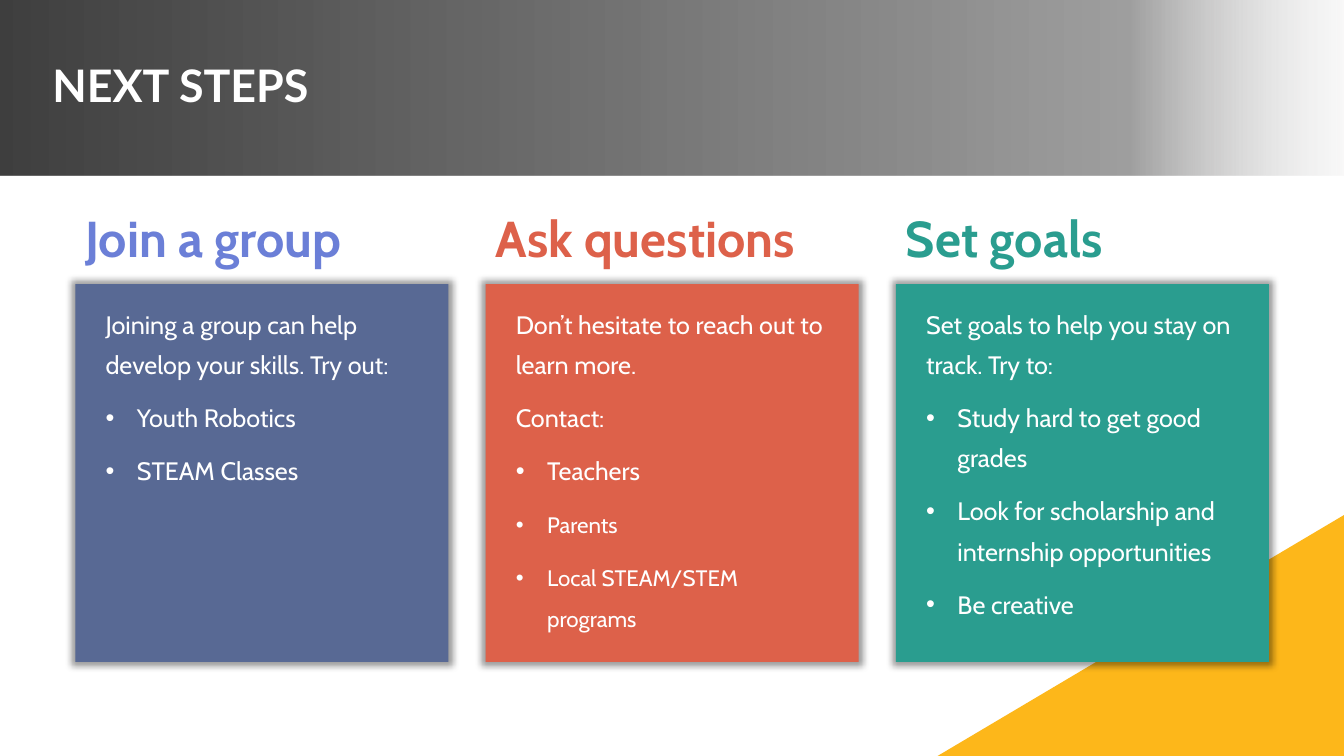
from dataclasses import dataclass

from lxml import etree
from pptx import Presentation
from pptx import util as u
from pptx.dml.color import RGBColor
from pptx.enum import shapes, text
from pptx.oxml import ns, parse_xml


@dataclass(frozen=True)
class Theme:
    white: str = "FFFFFF"
    gold: str = "FDB71A"
    blue: str = "586994"
    sky: str = "6B7FD7"
    red: str = "DD614A"
    green: str = "2A9D8F"
    title: int = 32
    head: int = 36
    body: int = 18
    small: int = 16
    head_font: str = "Lato"
    body_font: str = "Cabin"


@dataclass(frozen=True)
class Item:
    words: str
    dot: bool = True
    size: int = Theme.body


@dataclass(frozen=True)
class Card:
    head: str
    ink: str
    fill: str
    head_w: float
    body_h: float
    items: list[Item]


T = Theme()
WIDE, HIGH = 33.87, 19.05
LEFT, STEP = 1.9, 10.34
CARD_W, CARD_H, CARD_Y, HEAD_Y = 9.4, 9.52, 7.16, 5.61
PAD_X, PAD_Y = 0.51, 0.25
FADE = [(0, "000000", 75), (84, "808080", 75), (100, "E7E6E6", 25)]

CARDS = [
    Card("Join a group", T.sky, T.blue, 8.38, 4.95, [
        Item("Joining a group can help develop your skills. Try out:", dot=False),
        Item("Youth Robotics"),
        Item("STEAM Classes"),
    ]),
    Card("Ask questions", T.red, T.red, 8.89, 7.62, [
        Item("Don’t hesitate to reach out to learn more.", dot=False),
        Item("Contact:", dot=False),
        Item("Teachers"),
        Item("Parents", size=T.small),
        Item("Local STEAM/STEM programs", size=T.small),
    ]),
    Card("Set goals", T.green, T.green, 8.89, 8.36, [
        Item("Set goals to help you stay on track. Try to:", dot=False),
        Item("Study hard to get good grades"),
        Item("Look for scholarship and internship opportunities"),
        Item("Be creative"),
    ]),
]


def add_block(slide, kind, x: float, y: float, w: float, h: float, fill: str):
    block = slide.shapes.add_shape(kind, u.Cm(x), u.Cm(y), u.Cm(w), u.Cm(h))
    block.shadow.inherit = False
    block.fill.solid()
    block.fill.fore_color.rgb = RGBColor.from_string(fill)
    block.line.fill.background()
    return block


def add_glow(block) -> None:
    """Soft dark shadow, slightly larger than the block."""
    effect = block._element.spPr.find(ns.qn("a:effectLst"))
    glow = etree.SubElement(effect, ns.qn("a:outerShdw"), blurRad=str(u.Pt(5)),
                            dist="0", sx="102000", sy="102000", algn="ctr")
    tint = etree.SubElement(glow, ns.qn("a:srgbClr"), val="000000")
    etree.SubElement(tint, ns.qn("a:alpha"), val="40000")


def add_fade(block) -> None:
    """Swap the solid fill for a left-to-right fade."""
    stops = "".join(
        f'<a:gs pos="{pos * 1000}"><a:srgbClr val="{hue}">'
        f'<a:alpha val="{alpha * 1000}"/></a:srgbClr></a:gs>'
        for pos, hue, alpha in FADE)
    fade = parse_xml(f'<a:gradFill {ns.nsdecls("a")}><a:gsLst>{stops}</a:gsLst>'
                     '<a:lin ang="0" scaled="0"/></a:gradFill>')
    props = block._element.spPr
    props.replace(props.find(ns.qn("a:solidFill")), fade)


def add_box(slide, x: float, y: float, w: float, h: float):
    frame = slide.shapes.add_textbox(u.Cm(x), u.Cm(y), u.Cm(w), u.Cm(h)).text_frame
    frame.word_wrap = True
    return frame


def style(para, size: int, font: str, ink: str, bold: bool = False) -> None:
    for run in para.runs:
        run.font.size = u.Pt(size)
        run.font.name = font
        run.font.bold = bold
        run.font.color.rgb = RGBColor.from_string(ink)


def add_dot(para) -> None:
    props = para._p.get_or_add_pPr()
    props.set("marL", str(u.Cm(0.79)))
    props.set("indent", str(-u.Cm(0.79)))
    etree.SubElement(props, ns.qn("a:buFont"), typeface="Arial")
    etree.SubElement(props, ns.qn("a:buChar"), char="•")


def add_items(frame, items: list[Item], ink: str, bold: bool = False) -> None:
    frame.auto_size = text.MSO_AUTO_SIZE.SHAPE_TO_FIT_TEXT
    for i, item in enumerate(items):
        para = frame.add_paragraph() if i else frame.paragraphs[0]
        para.text = item.words
        para.line_spacing = u.Pt(28.8)
        para.space_before = u.Pt(6 if i else 0)
        para.space_after = u.Pt(3)
        if item.dot:
            add_dot(para)
        style(para, item.size, T.body_font, ink, bold)


def add_card(slide, card: Card, x: float) -> None:
    block = add_block(slide, shapes.MSO_SHAPE.RECTANGLE,
                      x, CARD_Y, CARD_W, CARD_H, card.fill)
    add_glow(block)
    body = add_box(slide, x + PAD_X, CARD_Y + PAD_Y, CARD_W - 2 * PAD_X, card.body_h)
    add_items(body, card.items, T.white)
    head = add_box(slide, x, HEAD_Y, card.head_w, 1.37)
    add_items(head, [Item(card.head, dot=False, size=T.head)], card.ink, bold=True)


def main() -> None:
    deck = Presentation()
    deck.slide_width, deck.slide_height = u.Cm(WIDE), u.Cm(HIGH)
    slide = deck.slides.add_slide(deck.slide_layouts[6])

    # Corner wedge
    wedge = add_block(slide, shapes.MSO_SHAPE.RIGHT_TRIANGLE,
                      WIDE - 10.24, HIGH - 6.07, 10.24, 6.07, T.gold)
    wedge._element.spPr.xfrm.set("flipH", "1")

    # Title band
    band = add_block(slide, shapes.MSO_SHAPE.RECTANGLE, 0, 0, WIDE, 4.43, T.white)
    add_fade(band)
    title = add_box(slide, 1.07, 1.3, 19.43, 1.83)
    title.vertical_anchor = text.MSO_ANCHOR.MIDDLE
    title.text = "NEXT STEPS"
    title.paragraphs[0].line_spacing = 0.9
    style(title.paragraphs[0], T.title, T.head_font, T.white, bold=True)

    # Three cards
    for i, card in enumerate(CARDS):
        add_card(slide, card, LEFT + i * STEP)

    deck.save("out.pptx")


if __name__ == "__main__":
    main()
